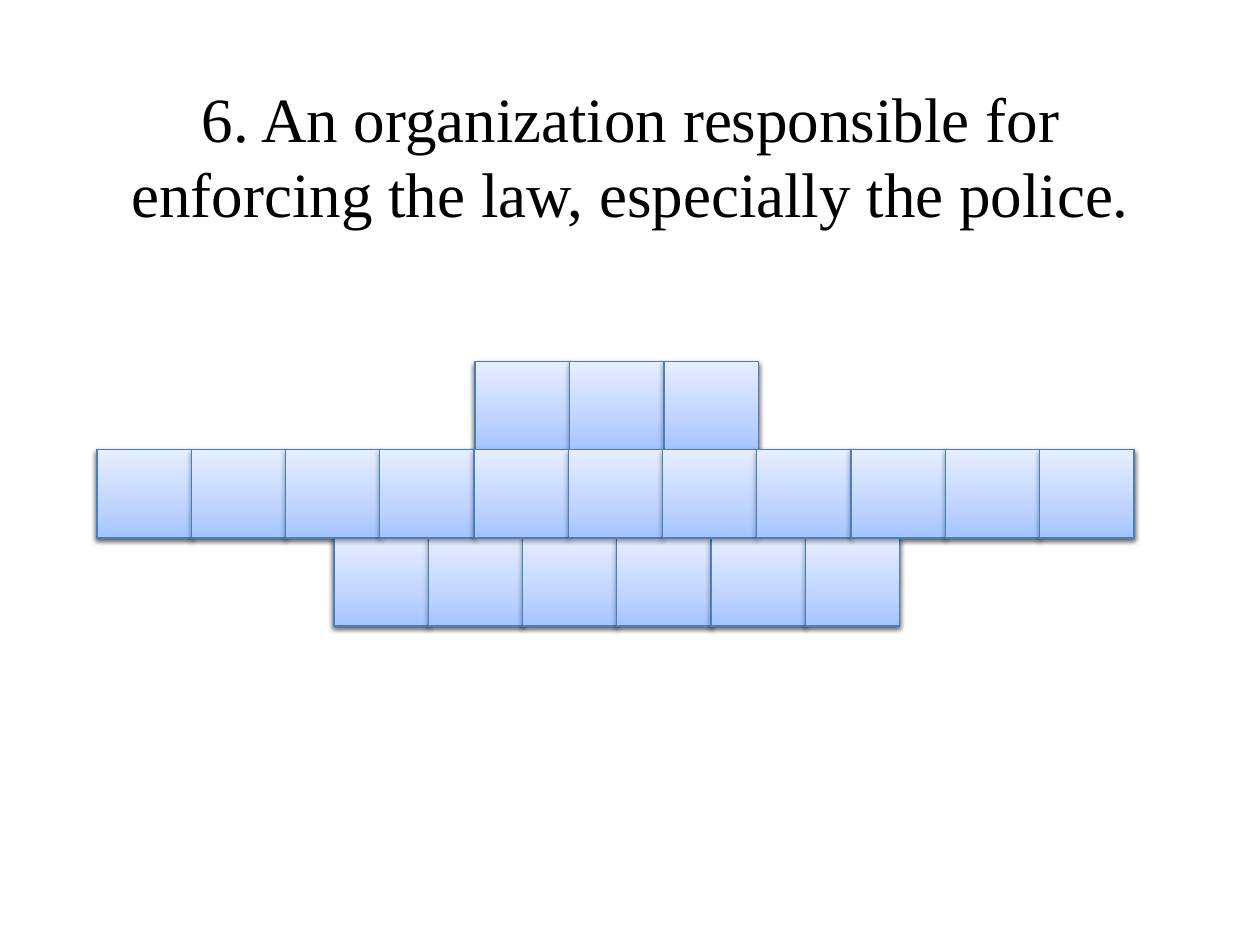
from pptx import Presentation
from pptx.dml.color import RGBColor
from pptx.enum.shapes import MSO_SHAPE as Shape
from pptx.enum.text import MSO_ANCHOR as Anchor, MSO_AUTO_SIZE as Fit, PP_ALIGN as Align
from pptx.oxml import parse_xml
from pptx.oxml.ns import nsdecls, qn
from pptx.util import Inches, Pt


def color(code):
    return RGBColor.from_string(code)


class Board:
    font = "Times New Roman"
    ink = "000000"
    edge = "4B7EBC"
    stops = [(0, "A4C4FF"), (35, "BFD4FF"), (100, "E6EEFF")]
    wide, high = 0.75, 0.7

    def __init__(self, deck):
        self.slide = deck.slides.add_slide(deck.slide_layouts[5])

    def title(self, text, left, top, width, height):
        box = self.slide.shapes.title
        box.left, box.top = Inches(left), Inches(top)
        box.width, box.height = Inches(width), Inches(height)
        frame = box.text_frame
        frame.text = text
        frame.word_wrap = True
        frame.auto_size = Fit.SHAPE_TO_FIT_TEXT
        frame.vertical_anchor = Anchor.TOP
        para = frame.paragraphs[0]
        para.alignment = Align.CENTER
        para.font.name = self.font
        para.font.size = Pt(36)
        para.font.color.rgb = color(self.ink)

    def tile(self, left, top):
        tile = self.slide.shapes.add_shape(
            Shape.RECTANGLE, Inches(left), Inches(top),
            Inches(self.wide), Inches(self.high))
        tile.line.color.rgb = color(self.edge)
        tile.line.width = Pt(0.75)
        props = tile._element.spPr
        # Gradient running from the bottom up
        stops = "".join(
            f'<a:gs pos="{pos * 1000}"><a:srgbClr val="{code}"/></a:gs>'
            for pos, code in self.stops)
        props.find(qn("a:prstGeom")).addnext(parse_xml(
            f'<a:gradFill {nsdecls("a")} rotWithShape="1"><a:gsLst>{stops}</a:gsLst>'
            '<a:lin ang="16200000" scaled="0"/></a:gradFill>'))
        # Soft shadow below
        props.append(parse_xml(
            f'<a:effectLst {nsdecls("a")}><a:outerShdw blurRad="{Pt(3.1)}" '
            f'dist="{Pt(1.6)}" dir="5400000" rotWithShape="0">'
            '<a:srgbClr val="000000"><a:alpha val="38000"/></a:srgbClr>'
            '</a:outerShdw></a:effectLst>'))

    def row(self, first, last, top, count):
        step = (last - first) / (count - 1)
        for i in range(count):
            self.tile(first + i * step, top)


def main():
    deck = Presentation()
    deck.slide_width, deck.slide_height = Inches(10), Inches(7.5)
    board = Board(deck)

    # Clue
    board.title("6. An organization responsible for enforcing the law, "
                "especially the police.", 0.92, 0.58, 8.17, 1.31)

    # Letter tiles, a cover layer over a base layer: first, last, top, count
    rows = [(2.65, 6.39, 4.27, 6), (3.77, 5.27, 2.87, 3), (0.77, 8.25, 3.57, 11)]
    for layer in range(2):
        for row in rows:
            board.row(*row)

    deck.save("out.pptx")


if __name__ == "__main__":
    main()
